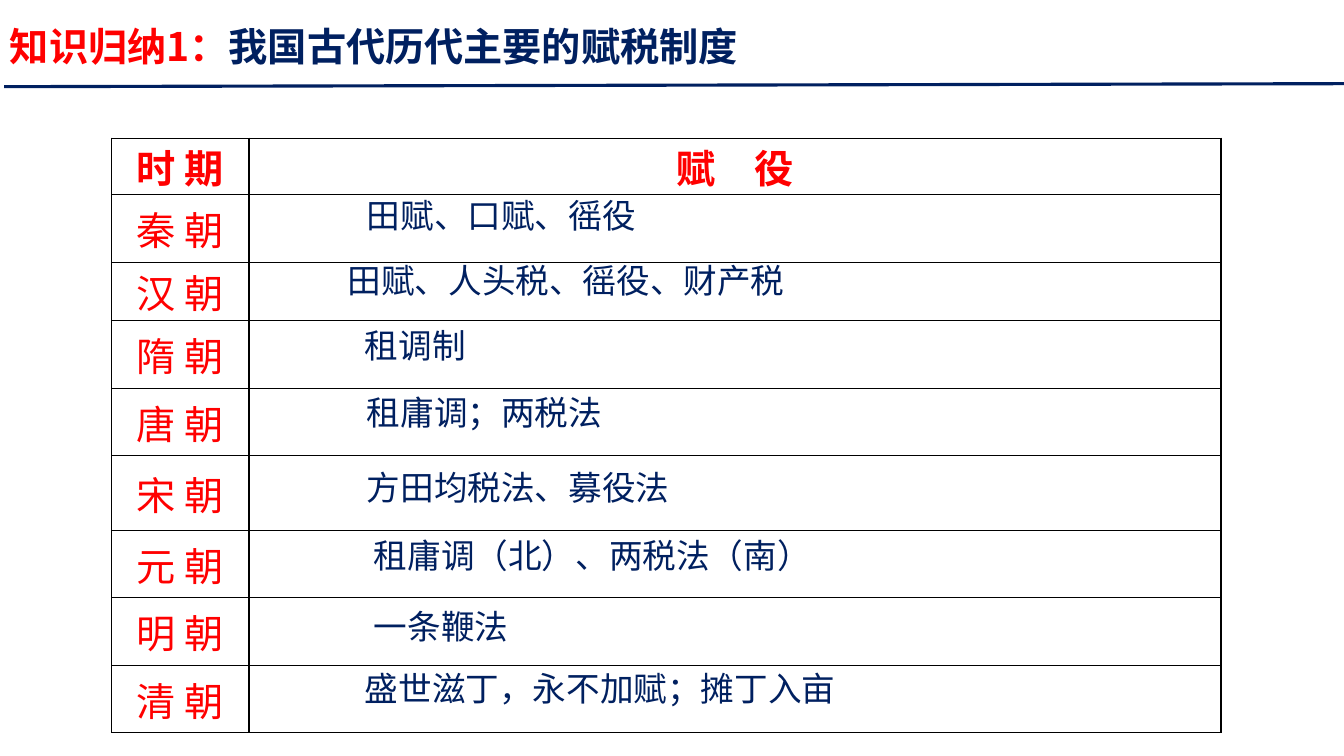
from lxml import etree
from pptx import Presentation
from pptx.dml.color import RGBColor
from pptx.enum.shapes import MSO_CONNECTOR
from pptx.enum.text import MSO_ANCHOR, PP_ALIGN
from pptx.oxml.ns import qn
from pptx.util import Inches, Pt

LINE = MSO_CONNECTOR.STRAIGHT
MIDDLE = MSO_ANCHOR.MIDDLE
CENTER = PP_ALIGN.CENTER

HUES = {"red": "FF0000", "navy": "002060", "black": "000000"}
SANS = "Noto Sans CJK SC"
HEAD = "Noto Sans CJK JP"

COLS = [1.36, 9.64]
ROWS = [0.48, 0.67, 0.58, 0.67, 0.67, 0.74, 0.67, 0.67, 0.67]
TITLES = ["时 期", "赋　役"]
# Dynasty, tax system, left and top of the tax text
TAXES = [
    ("秦", "田赋、口赋、徭役", 3.54, 1.88),
    ("汉", "田赋、人头税、徭役、财产税", 3.35, 2.53),
    ("隋", "租调制", 3.52, 3.17),
    ("唐", "租庸调；两税法", 3.54, 3.84),
    ("宋", "方田均税法、募役法", 3.54, 4.58),
    ("元", "租庸调（北）、两税法（南）", 3.61, 5.26),
    ("明", "一条鞭法", 3.61, 5.96),
    ("清", "盛世滋丁，永不加赋；摊丁入亩", 3.52, 6.58),
]


def hue(name):
    return RGBColor.from_string(HUES[name])


def style(para, size, color=None, bold=False, face=SANS):
    font = para.font
    font.size, font.bold, font.name = Pt(size), bold, face
    if color:
        font.color.rgb = hue(color)
    # East Asian text needs its own typeface
    base = para._p.pPr.find(qn("a:defRPr"))
    etree.SubElement(base, qn("a:ea"), typeface=face)


def add_text(slide, left, top, width, height):
    box = slide.shapes.add_textbox(
        Inches(left), Inches(top), Inches(width), Inches(height))
    box.text_frame.word_wrap = True
    return box.text_frame.paragraphs[0]


def add_edges(cell):
    props = cell._tc.get_or_add_tcPr()
    for spot, side in enumerate(("lnL", "lnR", "lnT", "lnB")):
        edge = etree.Element(qn(f"a:{side}"), w=str(Pt(1)))
        fill = etree.SubElement(edge, qn("a:solidFill"))
        etree.SubElement(fill, qn("a:srgbClr"), val=HUES["black"])
        props.insert(spot, edge)


def fill_cell(cell, text, bold):
    cell.vertical_anchor = MIDDLE
    cell.margin_left = cell.margin_right = Inches(0.07)
    cell.margin_top = cell.margin_bottom = 0
    para = cell.text_frame.paragraphs[0]
    para.text = text
    para.alignment = CENTER
    style(para, 28, "red", bold)


def add_header(slide, left, top, width, height):
    # Title in two colours
    para = add_text(slide, left, top, width, height)
    for text, color in (("知识归纳1：", "red"),
                        ("我国古代历代主要的赋税制度", "navy")):
        run = para.add_run()
        run.text = text
        run.font.color.rgb = hue(color)
    style(para, 28, bold=True, face=HEAD)

    # Rule below the title
    rule = slide.shapes.add_connector(
        LINE, Inches(left + 0.04), Inches(top + 0.69),
        Inches(left + 13.34), Inches(top + 0.66))
    rule.line.color.rgb = hue("navy")
    rule.line.width = Pt(2.25)
    etree.SubElement(rule._element.spPr, qn("a:effectLst"))


def add_grid(slide, left, top):
    frame = slide.shapes.add_table(
        len(ROWS), len(COLS), Inches(left), Inches(top),
        Inches(sum(COLS)), Inches(sum(ROWS)))
    grid = frame.table
    grid.first_row = grid.horz_banding = False
    for col, width in zip(grid.columns, COLS):
        col.width = Inches(width)
    for row, height in zip(grid.rows, ROWS):
        row.height = Inches(height)
    for cell in grid.iter_cells():
        cell.fill.background()
        add_edges(cell)

    # Column titles, then one dynasty a row
    for col, text in enumerate(TITLES):
        fill_cell(grid.cell(0, col), text, True)
    for row, tax in enumerate(TAXES, 1):
        fill_cell(grid.cell(row, 0), f"{tax[0]} 朝", False)


def add_taxes(slide, width, height):
    for _, text, left, top in TAXES:
        para = add_text(slide, left, top, width, height)
        para.text = text
        style(para, 24, "navy")


def main():
    deck = Presentation()
    deck.slide_width, deck.slide_height = Inches(13.33), Inches(7.5)
    slide = deck.slides.add_slide(deck.slide_layouts[6])
    add_grid(slide, 1.11, 1.37)
    add_taxes(slide, 6, 0.5)
    add_header(slide, 0, 0.17, 7.63, 0.57)
    deck.save("out.pptx")


if __name__ == "__main__":
    main()
